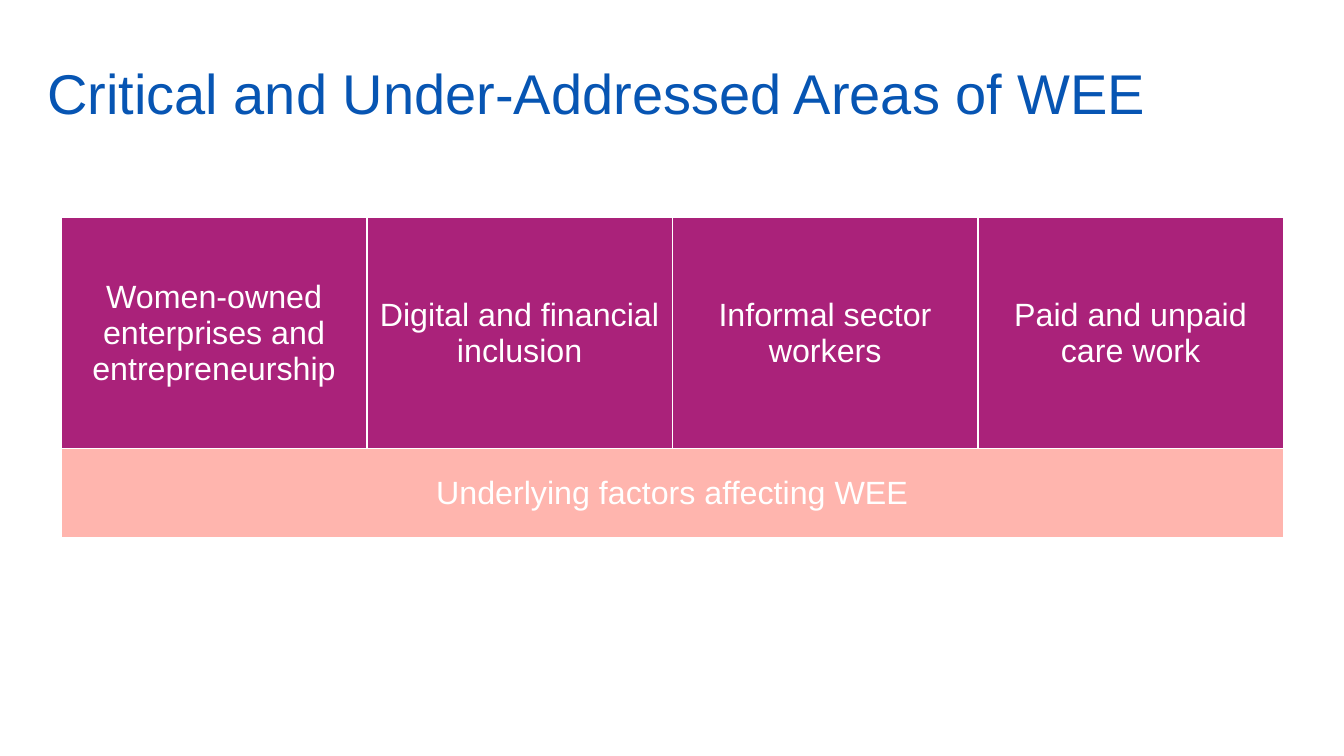
from lxml import etree
from pptx import Presentation
from pptx.dml.color import RGBColor
from pptx.enum.text import MSO_ANCHOR, PP_ALIGN
from pptx.oxml.ns import qn
from pptx.util import Inches, Pt

MIDDLE = MSO_ANCHOR.MIDDLE
LEFT, CENTER = PP_ALIGN.LEFT, PP_ALIGN.CENTER

TITLE = "Critical and Under-Addressed Areas of WEE"
AREAS = [
    "Women-owned enterprises and entrepreneurship",
    "Digital and financial inclusion",
    "Informal sector workers",
    "Paid and unpaid care work",
]
FOUNDATION = "Underlying factors affecting WEE"
COLORS = {"title": "0755B3", "area": "AA227A", "foundation": "FFB5AE", "white": "FFFFFF"}
COLUMN_WIDTH = 3.03
ROW_HEIGHTS = [2.29, 0.88]


def write_text(frame, text, size, color, align, spacing=1.0):
    frame.word_wrap = True
    para = frame.paragraphs[0]
    para.alignment = align
    para.line_spacing = spacing
    span = para.add_run()
    span.text = text
    span.font.name = "Arial"
    span.font.size = Pt(size)
    span.font.bold = False
    span.font.color.rgb = RGBColor.from_string(COLORS[color])


def set_borders(cell):
    properties = cell._tc.get_or_add_tcPr()
    for index, side in enumerate(("lnL", "lnR", "lnT", "lnB")):
        line = etree.Element(qn(f"a:{side}"), w=str(Pt(1)))
        fill = etree.SubElement(line, qn("a:solidFill"))
        etree.SubElement(fill, qn("a:srgbClr"), val=COLORS["white"])
        properties.insert(index, line)


def format_cell(cell, fill):
    cell.fill.solid()
    cell.fill.fore_color.rgb = RGBColor.from_string(COLORS[fill])
    cell.vertical_anchor = MIDDLE
    set_borders(cell)


def main():
    deck = Presentation()
    deck.slide_width, deck.slide_height = Inches(13.33), Inches(7.5)
    page = deck.slides.add_slide(deck.slide_layouts[5])

    title = page.shapes.title
    title.left, title.top = Inches(0.37), Inches(0.49)
    title.width, title.height = Inches(11.5), Inches(0.93)
    title.text_frame.vertical_anchor = MIDDLE
    write_text(title.text_frame, TITLE, 40, "title", LEFT, 0.9)

    table = page.shapes.add_table(
        len(ROW_HEIGHTS), len(AREAS), Inches(0.61), Inches(2.16),
        Inches(COLUMN_WIDTH * len(AREAS)), Inches(sum(ROW_HEIGHTS)),
    ).table
    for row, height in zip(table.rows, ROW_HEIGHTS):
        row.height = Inches(height)
    for index, area in enumerate(AREAS):
        table.columns[index].width = Inches(COLUMN_WIDTH)
        format_cell(table.cell(0, index), "area")
        format_cell(table.cell(1, index), "foundation")
        write_text(table.cell(0, index).text_frame, area, 23, "white", CENTER)

    base = table.cell(1, 0)
    base.merge(table.cell(1, len(AREAS) - 1))
    write_text(base.text_frame, FOUNDATION, 23, "white", CENTER)

    deck.save("out.pptx")


if __name__ == "__main__":
    main()
